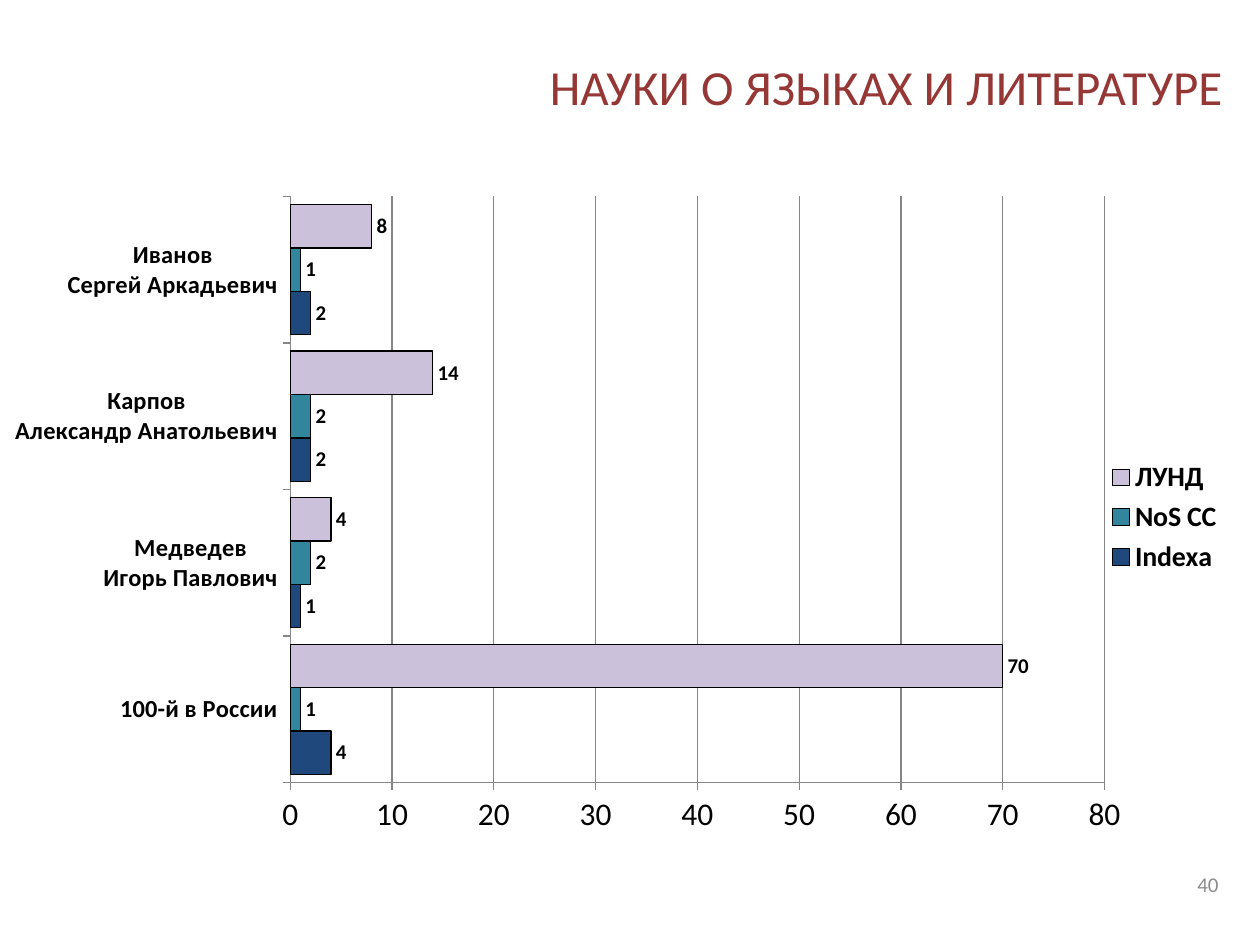
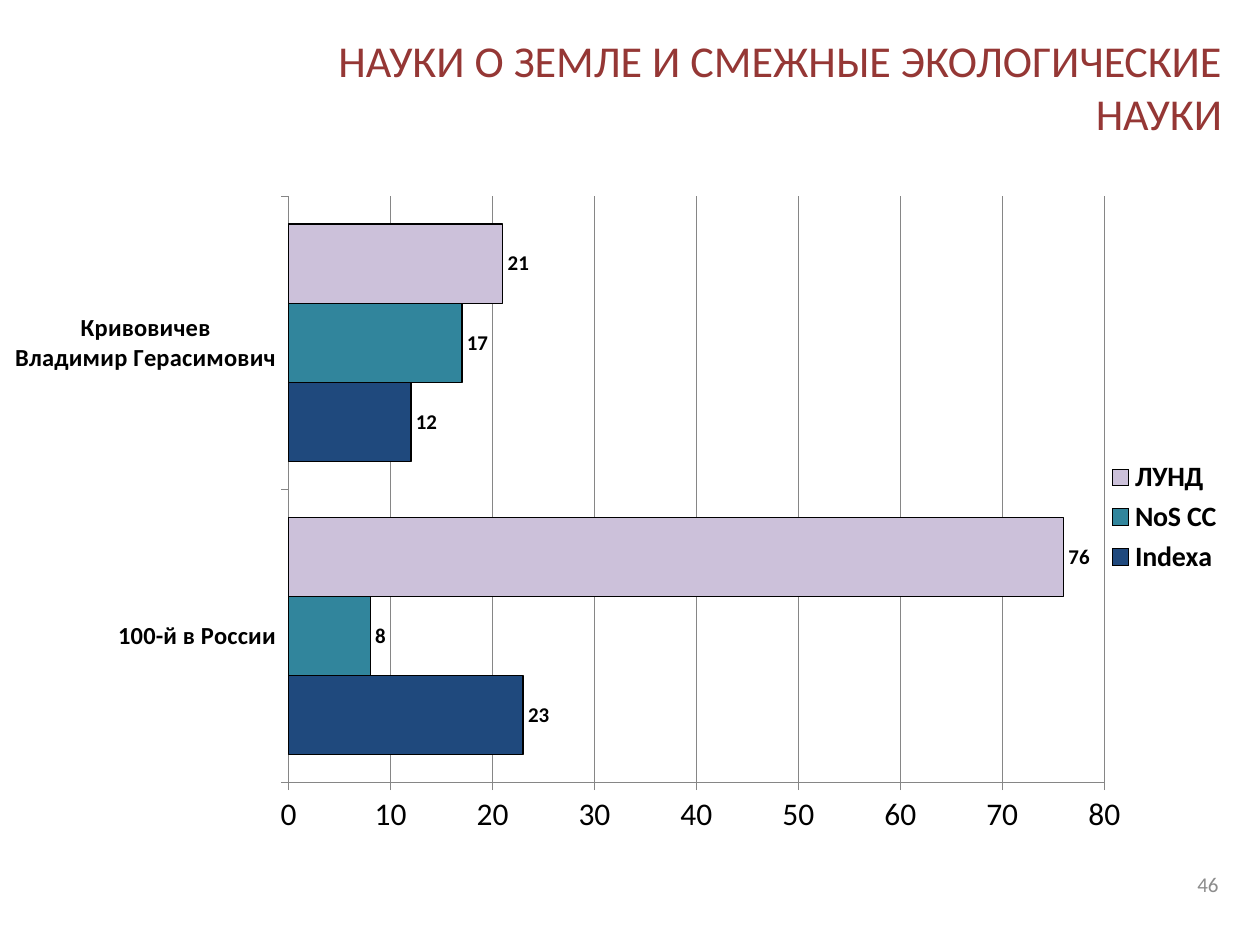
from lxml import etree
from pptx import Presentation
from pptx.chart.data import CategoryChartData
from pptx.dml.color import RGBColor
from pptx.enum.chart import XL_CHART_TYPE as ChartType, XL_LABEL_POSITION as LabelPosition
from pptx.enum.chart import XL_LEGEND_POSITION as LegendPosition, XL_TICK_MARK as TickMark
from pptx.enum.text import MSO_ANCHOR as Anchor, PP_ALIGN as Align
from pptx.oxml.ns import qn
from pptx.util import Inches, Pt

FONT = "Calibri"
COLORS = {
    "title": "953735",
    "number": "8C8C8C",
    "text": "000000",
    "grid": "868686",
    "Indexa": "1F497D",
    "NoS CC": "31859C",
    "ЛУНД": "CCC1DA",
}
PLOT_LAYOUT = {
    "layoutTarget": "inner", "xMode": "edge", "yMode": "edge",
    "x": "0.223", "y": "0.031", "w": "0.669", "h": "0.857",
}
RATINGS = [
    {
        "title": "НАУКИ О ЯЗЫКАХ И ЛИТЕРАТУРЕ",
        "title_size": 28,
        "number": "40",
        "gap": 38,
        "people": ["100-й в России", "Медведев\nИгорь Павлович",
                   "Карпов\nАлександр Анатольевич", "Иванов\nСергей Аркадьевич"],
        "scores": {"Indexa": [4, 1, 2, 2], "NoS CC": [1, 2, 2, 1], "ЛУНД": [70, 4, 14, 8]},
    },
    {
        "title": "НАУКИ О ЗЕМЛЕ И СМЕЖНЫЕ ЭКОЛОГИЧЕСКИЕ НАУКИ",
        "title_size": 25.2,
        "number": "46",
        "gap": 70,
        "people": ["100-й в России", "Кривовичев\nВладимир Герасимович"],
        "scores": {"Indexa": [23, 12], "NoS CC": [8, 17], "ЛУНД": [76, 21]},
    },
]


def style_font(font, size, color="text", bold=False):
    font.name = FONT
    font.size = Pt(size)
    font.bold = bold
    font.color.rgb = RGBColor.from_string(COLORS[color])


def write_text(box, text, size, color, align=Align.RIGHT):
    frame = box.text_frame
    frame.word_wrap = True
    frame.vertical_anchor = Anchor.MIDDLE
    para = frame.paragraphs[0]
    para.alignment = align
    span = para.add_run()
    span.text = text
    style_font(span.font, size, color)


deck = Presentation()
deck.slide_width, deck.slide_height = Inches(10), Inches(7.5)

for rating in RATINGS:
    page = deck.slides.add_slide(deck.slide_layouts[5])
    title = page.shapes.title
    title.left, title.top = Inches(2.56), Inches(0.3)
    title.width, title.height = Inches(7.24), Inches(0.77)
    write_text(title, rating["title"], rating["title_size"], "title")

    data = CategoryChartData()
    data.categories = rating["people"]
    for index_name, values in rating["scores"].items():
        data.add_series(index_name, values)
    chart = page.shapes.add_chart(
        ChartType.BAR_CLUSTERED, Inches(0.12), Inches(1.39), Inches(9.69), Inches(5.43), data
    ).chart
    chart.has_title = False
    style_font(chart.font, 18)

    chart.has_legend = True
    chart.legend.position = LegendPosition.RIGHT
    chart.legend.include_in_layout = False
    style_font(chart.legend.font, 16, bold=True)

    people_axis, score_axis = chart.category_axis, chart.value_axis
    style_font(people_axis.tick_labels.font, 14, bold=True)
    style_font(score_axis.tick_labels.font, 18)
    score_axis.minimum_scale, score_axis.maximum_scale = 0, 80
    score_axis.major_unit = 10
    score_axis.has_major_gridlines = True
    for line in (people_axis.format.line, score_axis.format.line,
                 score_axis.major_gridlines.format.line):
        line.color.rgb = RGBColor.from_string(COLORS["grid"])
        line.width = Pt(0.75)
    for axis in (people_axis, score_axis):
        axis.major_tick_mark = TickMark.OUTSIDE
        axis.minor_tick_mark = TickMark.NONE

    plot = chart.plots[0]
    plot.gap_width = rating["gap"]
    plot.overlap = 0
    plot.vary_by_categories = False
    for series in plot.series:
        series.format.fill.solid()
        series.format.fill.fore_color.rgb = RGBColor.from_string(COLORS[series.name])
        series.format.line.color.rgb = RGBColor.from_string(COLORS["text"])
        series.format.line.width = Pt(0.75)
        labels = series.data_labels
        labels.show_value = True
        labels.position = LabelPosition.OUTSIDE_END
        style_font(labels.font, 12, bold=True)

    plot_area = chart.element.find(".//" + qn("c:plotArea"))
    for old_layout in plot_area.findall(qn("c:layout")):
        plot_area.remove(old_layout)
    layout = etree.Element(qn("c:layout"))
    manual = etree.SubElement(layout, qn("c:manualLayout"))
    for tag, value in PLOT_LAYOUT.items():
        etree.SubElement(manual, qn("c:" + tag)).set("val", value)
    plot_area.insert(0, layout)

    number = page.shapes.add_textbox(Inches(7.44), Inches(6.82), Inches(2.33), Inches(0.4))
    write_text(number, rating["number"], 12, "number")

deck.save("out.pptx")
